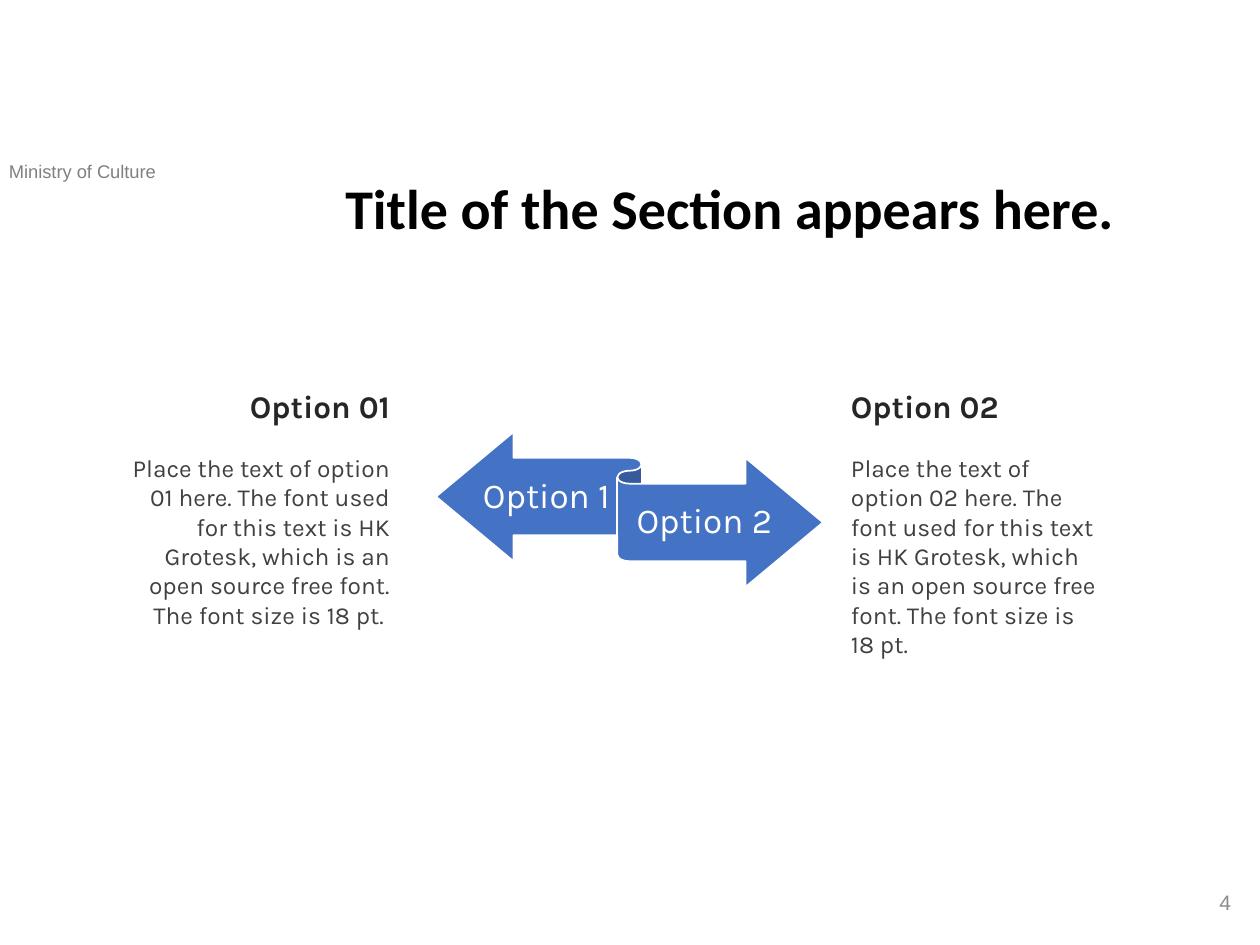
from dataclasses import dataclass

from pptx import Presentation
from pptx.dml.color import RGBColor
from pptx.enum import shapes, text
from pptx.slide import Slide
from pptx.util import Emu, Pt

PX = 914400 / 126

BLACK = RGBColor(0x00, 0x00, 0x00)
WHITE = RGBColor(0xFF, 0xFF, 0xFF)
BLUE = RGBColor(0x44, 0x72, 0xC4)
HEADING = RGBColor(0x26, 0x26, 0x26)
BODY = RGBColor(0x40, 0x40, 0x40)
GREY = RGBColor(0x80, 0x80, 0x80)
PAGE_GREY = RGBColor(0x8C, 0x8C, 0x8C)

LEFT, CENTER, RIGHT = text.PP_ALIGN.LEFT, text.PP_ALIGN.CENTER, text.PP_ALIGN.RIGHT
TOP, MIDDLE = text.MSO_ANCHOR.TOP, text.MSO_ANCHOR.MIDDLE


@dataclass(frozen=True)
class Box:
    left: int
    top: int
    width: int
    height: int

    def emu(self) -> list[Emu]:
        return [px(n) for n in (self.left, self.top, self.width, self.height)]


@dataclass(frozen=True)
class Line:
    words: str
    size: float
    color: RGBColor
    font: str = "Karla"
    bold: bool = False
    before: int = 0


@dataclass(frozen=True)
class Option:
    heading: str
    body: str
    box: Box
    align: text.PP_ALIGN
    label: str
    label_box: Box


def px(length: int) -> Emu:
    return Emu(round(length * PX))


def add_text(slide: Slide, box: Box, *lines: Line, align=LEFT, anchor=TOP,
             spacing: float = 1.0, side_inset: int = 13, inset: int = 6,
             grow: bool = False) -> None:
    frame = slide.shapes.add_textbox(*box.emu()).text_frame
    frame.word_wrap = True
    frame.vertical_anchor = anchor
    frame.margin_left = frame.margin_right = px(side_inset)
    frame.margin_top = frame.margin_bottom = px(inset)
    if grow:
        frame.auto_size = text.MSO_AUTO_SIZE.SHAPE_TO_FIT_TEXT
    for index, line in enumerate(lines):
        paragraph = frame.add_paragraph() if index else frame.paragraphs[0]
        paragraph.alignment = align
        paragraph.line_spacing = spacing
        if line.before:
            paragraph.space_before = Pt(line.before)
        run = paragraph.add_run()
        run.text = line.words
        run.font.name = line.font
        run.font.size = Pt(line.size)
        run.font.bold = line.bold
        run.font.color.rgb = line.color


def add_ribbon(slide: Slide, box: Box) -> None:
    ribbon = slide.shapes.add_shape(shapes.MSO_SHAPE.LEFT_RIGHT_RIBBON, *box.emu())
    ribbon.shadow.inherit = False
    ribbon.fill.solid()
    ribbon.fill.fore_color.rgb = BLUE
    ribbon.line.color.rgb = WHITE
    ribbon.line.width = Pt(1)


def add_option(slide: Slide, option: Option) -> None:
    """Add the label on the ribbon and the description beside it."""
    add_text(slide, option.label_box, Line(option.label, 20, WHITE),
             align=CENTER, anchor=MIDDLE, spacing=0.9, side_inset=0, inset=10)
    add_text(slide, option.box,
             Line(option.heading, 18, HEADING, bold=True),
             Line(option.body, 14, BODY, before=16),
             align=option.align, grow=True)


OPTIONS = [
    Option("Option 01",
           "Place the text of option 01 here. The font used for this text is HK Grotesk, "
           "which is an open source free font. The font size is 18 pt. ",
           Box(116, 381, 287, 286), RIGHT, "Option 1", Box(483, 459, 127, 76)),
    Option("Option 02",
           "Place the text of option 02 here. The font used for this text is HK Grotesk, "
           "which is an open source free font. The font size is 18 pt.",
           Box(838, 381, 278, 286), LEFT, "Option 2", Box(629, 484, 151, 76)),
]


def main() -> None:
    presentation = Presentation()
    presentation.slide_width, presentation.slide_height = px(1260), px(945)
    slide = presentation.slides.add_slide(presentation.slide_layouts[6])

    add_text(slide, Box(-4, 154, 275, 35),
             Line("Ministry of Culture", 10.5, GREY, "Arial"), grow=True)
    add_ribbon(slide, Box(436, 432, 387, 155))
    for option in OPTIONS:
        add_option(slide, option)
    add_text(slide, Box(960, 877, 284, 50), Line("4", 12, PAGE_GREY, "Arial"),
             align=RIGHT, anchor=MIDDLE)
    add_text(slide, Box(323, 175, 814, 100),
             Line("Title of the Section appears here.", 32, BLACK, "Calibri", bold=True),
             align=CENTER, spacing=0.9)
    presentation.save("out.pptx")


if __name__ == "__main__":
    main()
